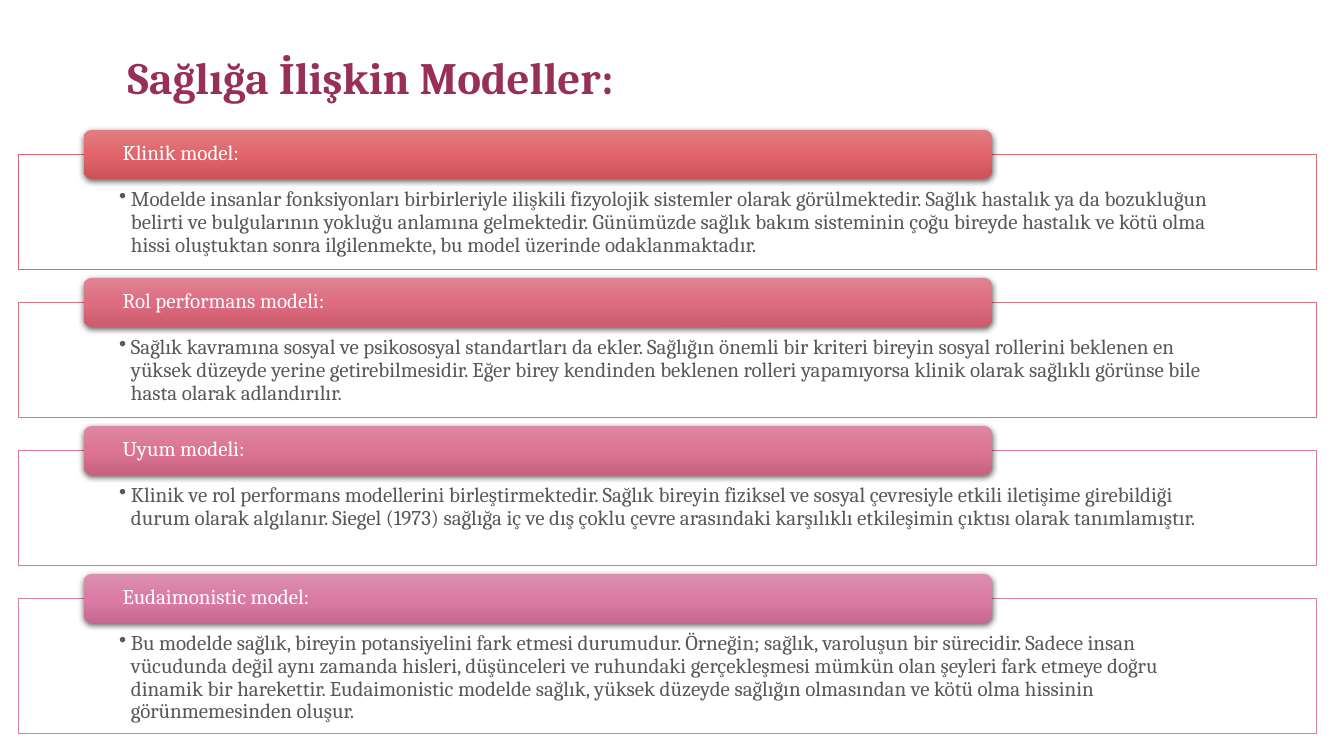
from copy import deepcopy

from lxml import etree
from pptx import Presentation
from pptx.dml.color import RGBColor
from pptx.enum import shapes, text
from pptx.oxml import parse_xml
from pptx.oxml.ns import nsdecls, qn
from pptx.util import Cm, Pt

WHITE = RGBColor(0xFF, 0xFF, 0xFF)
GREY = RGBColor(0x59, 0x59, 0x59)
PLUM = RGBColor(0x97, 0x2F, 0x57)

# Heading, description, box height in cm, outline, gradient from top to bottom
MODELS = [
    ("Klinik model:",
     "Modelde insanlar fonksiyonları birbirleriyle ilişkili fizyolojik sistemler olarak "
     "görülmektedir. Sağlık hastalık ya da bozukluğun belirti ve bulgularının yokluğu anlamına "
     "gelmektedir. Günümüzde sağlık bakım sisteminin çoğu bireyde hastalık ve kötü olma hissi "
     "oluştuktan sonra ilgilenmekte, bu model üzerinde odaklanmaktadır.",
     2.9, RGBColor(0xDB, 0x6B, 0x70),
     (RGBColor(0xE0, 0x7E, 0x82), RGBColor(0xE1, 0x65, 0x6B), RGBColor(0xCE, 0x53, 0x59))),
    ("Rol performans modeli:",
     "Sağlık kavramına sosyal ve psikososyal standartları da ekler. Sağlığın önemli bir kriteri "
     "bireyin sosyal rollerini beklenen en yüksek düzeyde yerine getirebilmesidir. Eğer birey "
     "kendinden beklenen rolleri yapamıyorsa klinik olarak sağlıklı görünse bile hasta olarak "
     "adlandırılır.",
     2.9, RGBColor(0xD9, 0x72, 0x84),
     (RGBColor(0xDE, 0x84, 0x93), RGBColor(0xDE, 0x6D, 0x81), RGBColor(0xCC, 0x5B, 0x6E))),
    ("Uyum modeli:",
     "Klinik ve rol performans modellerini birleştirmektedir. Sağlık bireyin fiziksel ve sosyal "
     "çevresiyle etkili iletişime girebildiği durum olarak algılanır. Siegel (1973) sağlığa iç ve "
     "dış çoklu çevre arasındaki karşılıklı etkileşimin çıktısı olarak tanımlamıştır.",
     2.9, RGBColor(0xD7, 0x79, 0x96),
     (RGBColor(0xDD, 0x8A, 0xA2), RGBColor(0xDC, 0x74, 0x94), RGBColor(0xC9, 0x62, 0x81))),
    ("Eudaimonistic model:",
     "Bu modelde sağlık, bireyin potansiyelini fark etmesi durumudur. Örneğin; sağlık, varoluşun "
     "bir sürecidir. Sadece insan vücudunda değil aynı zamanda hisleri, düşünceleri ve ruhundaki "
     "gerçekleşmesi mümkün olan şeyleri fark etmeye doğru dinamik bir harekettir. Eudaimonistic "
     "modelde sağlık, yüksek düzeyde sağlığın olmasından ve kötü olma hissinin görünmemesinden "
     "oluşur.",
     3.4, RGBColor(0xD6, 0x80, 0xA5),
     (RGBColor(0xDB, 0x8F, 0xAF), RGBColor(0xDA, 0x7C, 0xA4), RGBColor(0xC7, 0x69, 0x91))),
]
FIRST_TOP = 3.89
PITCH = 3.73
HEADING_RISE = 0.62


def write(shape, content, size=15, color=GREY, bold=False, bullet=False,
          anchor=text.MSO_ANCHOR.TOP, insets=(0.25, 0.13, 0.25, 0.13)):
    """Fill the shape with one paragraph; insets are left, top, right, bottom in cm."""
    frame = shape.text_frame
    frame.word_wrap = True
    frame.vertical_anchor = anchor
    frame.margin_left, frame.margin_top, frame.margin_right, frame.margin_bottom = map(Cm, insets)
    paragraph = frame.paragraphs[0]
    paragraph.text = content
    paragraph.alignment = text.PP_ALIGN.LEFT
    paragraph.line_spacing = 0.9
    if bullet:
        properties = paragraph._p.get_or_add_pPr()
        properties.set("marL", str(Cm(0.3)))
        properties.set("indent", str(-Cm(0.3)))
        etree.SubElement(properties, qn("a:buChar"), char="•")
    font = paragraph.runs[0].font
    font.name = "Cambria"
    font.size = Pt(size)
    font.bold = bold
    font.color.rgb = color


presentation = Presentation()
presentation.slide_width = Cm(33.87)
presentation.slide_height = Cm(19.05)
slide = presentation.slides.add_slide(presentation.slide_layouts[6])

title = slide.shapes.add_textbox(Cm(2.97), Cm(1.27), Cm(27.94), Cm(1.8))
write(title, "Sağlığa İlişkin Modeller:", size=32, color=PLUM, bold=True)

for index, (heading, description, height, outline, gradient) in enumerate(MODELS):
    top = FIRST_TOP + index * PITCH

    box = slide.shapes.add_shape(
        shapes.MSO_SHAPE.RECTANGLE, Cm(0.46), Cm(top), Cm(32.72), Cm(height))
    box.shadow.inherit = False
    box.fill.solid()
    box.fill.fore_color.rgb = WHITE
    box.line.color.rgb = outline
    box.line.width = Pt(0.5)
    write(box, description, bullet=True, insets=(2.54, 0.86, 2.54, 0.3))

    banner = slide.shapes.add_shape(
        shapes.MSO_SHAPE.ROUNDED_RECTANGLE, Cm(2.11), Cm(top - HEADING_RISE), Cm(22.89), Cm(1.23))
    banner.line.fill.background()
    banner.fill.gradient()
    banner.fill.gradient_angle = 270
    banner_properties = banner._element.spPr
    stop_list = banner_properties.find(".//" + qn("a:gsLst"))
    stop_list.append(deepcopy(stop_list[-1]))
    for stop, position, color in zip(banner.fill.gradient_stops, (0, 0.5, 1), gradient):
        stop.position = position
        stop.color.rgb = color
    banner.shadow.inherit = False
    banner_properties.find(qn("a:effectLst")).append(parse_xml(
        f'<a:outerShdw {nsdecls("a")} blurRad="{Pt(4.5)}" dist="{Pt(1.5)}" dir="5400000" '
        'rotWithShape="0"><a:srgbClr val="000000"><a:alpha val="63000"/></a:srgbClr>'
        '</a:outerShdw>'))
    write(banner, heading, color=WHITE, anchor=text.MSO_ANCHOR.MIDDLE, insets=(0.92, 0, 0.92, 0))

presentation.save("out.pptx")
